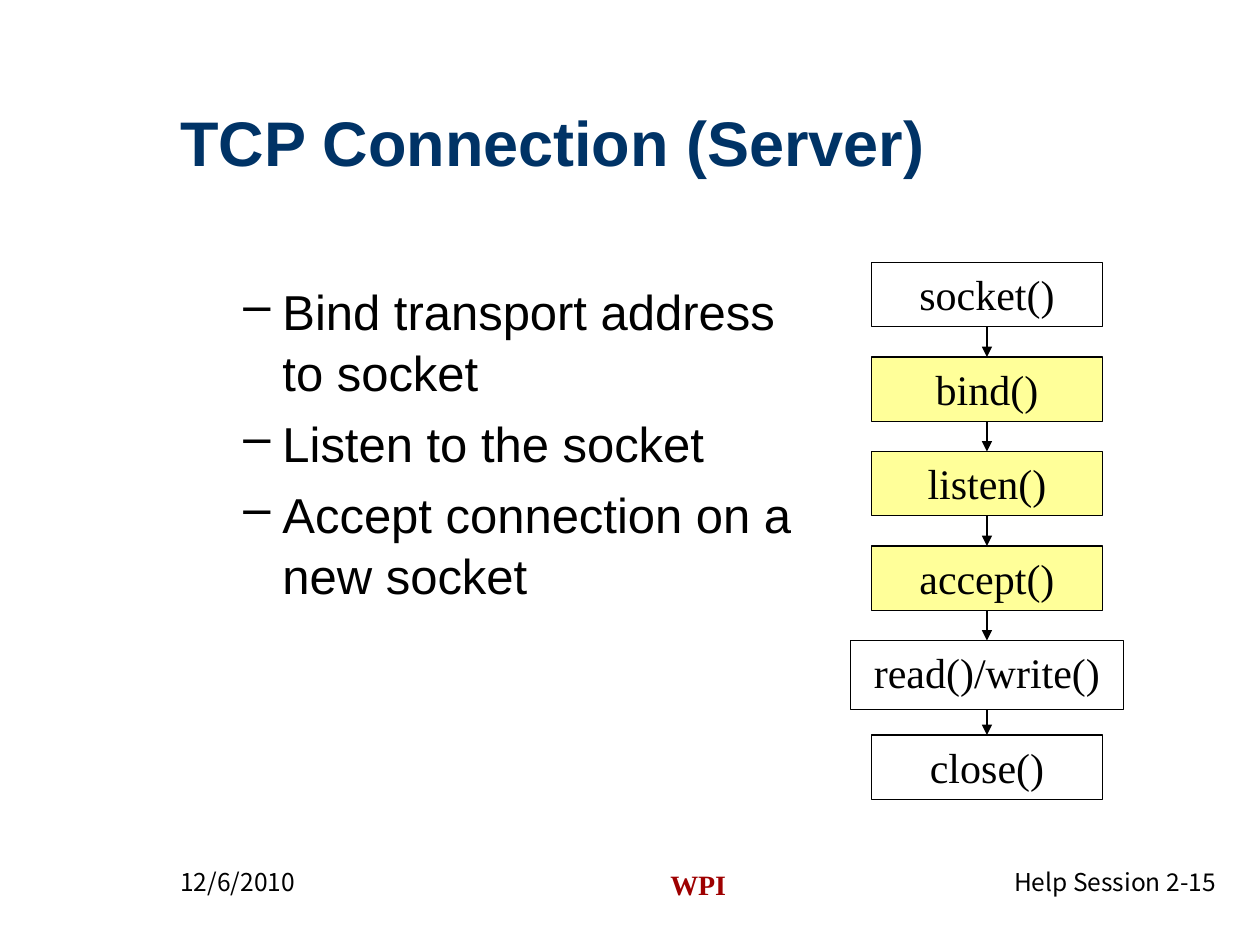
"""Builds the TCP server connection slide."""
import lxml.etree
import pptx
import pptx.dml.color
import pptx.enum.shapes
import pptx.enum.text
import pptx.oxml.ns
import pptx.util

ALIGN = pptx.enum.text.PP_ALIGN
ANCHOR = pptx.enum.text.MSO_ANCHOR
SHAPES = pptx.enum.shapes


def cells(count):
    """Turn grid cells, twelve to the inch, into a length."""
    return pptx.util.Inches(count / 12)


def color(hex_text):
    """Turn a hex string into a colour."""
    return pptx.dml.color.RGBColor.from_string(hex_text)


def add_element(parent, tag, **attributes):
    """Append a drawing element to its parent."""
    return lxml.etree.SubElement(parent, pptx.oxml.ns.qn(tag), **attributes)


def write(paragraph, text, *, font, size, ink="000000", bold=False,
          align=ALIGN.LEFT, before=0, line=1.0, bullet=None):
    """Write one formatted run into a paragraph."""
    if bullet:
        properties = paragraph._p.get_or_add_pPr()
        properties.set("marL", str(pptx.util.Inches(0.81)))
        properties.set("indent", str(pptx.util.Inches(-0.31)))
        add_element(properties, "a:buChar", char=bullet)
    paragraph.alignment = align
    paragraph.space_before = pptx.util.Pt(before)
    paragraph.line_spacing = line
    run = paragraph.add_run()
    run.text = text
    run.font.name = font
    run.font.size = pptx.util.Pt(size)
    run.font.bold = bold
    run.font.color.rgb = color(ink)


class Deck:
    """Holds the style and the current slide."""

    SANS, SERIF, FOOTER = "Arial", "Times New Roman", "Noto Sans CJK KR"
    NAVY, RED, YELLOW, BLACK = "003366", "9E0000", "FFFF99", "000000"
    LINE = 0.75

    def __init__(self, columns, rows):
        """Open a deck with one blank slide."""
        self.presentation = pptx.Presentation()
        self.presentation.slide_width = cells(columns)
        self.presentation.slide_height = cells(rows)
        self.slide = self.presentation.slides.add_slide(
            self.presentation.slide_layouts[6])

    def text(self, area, lines, anchor=ANCHOR.TOP, **style):
        """Add a text box with one paragraph per line."""
        frame = self.slide.shapes.add_textbox(*map(cells, area)).text_frame
        frame.word_wrap = True
        frame.vertical_anchor = anchor
        gap = style.pop("before", 0)
        for index, line in enumerate(lines):
            paragraph = frame.add_paragraph() if index else frame.paragraphs[0]
            write(paragraph, line, before=gap if index else 0, **style)

    def step(self, center, top, width, height, call, fill=None):
        """Add a box naming one socket call."""
        box = self.slide.shapes.add_shape(
            SHAPES.MSO_SHAPE.RECTANGLE,
            *map(cells, (center - width / 2, top, width, height)))
        box.shadow.inherit = False
        if fill:
            box.fill.solid()
            box.fill.fore_color.rgb = color(fill)
        else:
            box.fill.background()
        box.line.color.rgb = color(self.BLACK)
        box.line.width = pptx.util.Pt(self.LINE)
        box.text_frame.word_wrap = True
        box.text_frame.vertical_anchor = ANCHOR.TOP
        write(box.text_frame.paragraphs[0], call, font=self.SERIF, size=24,
              align=ALIGN.CENTER)

    def arrow(self, center, start, end):
        """Add a downward arrow."""
        arrow = self.slide.shapes.add_connector(
            SHAPES.MSO_CONNECTOR.STRAIGHT,
            *map(cells, (center, start, center, end)))
        arrow.line.color.rgb = color(self.BLACK)
        arrow.line.width = pptx.util.Pt(self.LINE)
        add_element(arrow.line._get_or_add_ln(), "a:tailEnd", type="triangle")
        add_element(arrow._element.spPr, "a:effectLst")


def main():
    """Build and save the slide."""
    deck = Deck(120, 90)
    deck.text((16, 6, 99, 15), ["TCP Connection (Server)"], ANCHOR.MIDDLE,
              font=deck.SANS, size=36, ink=deck.NAVY, bold=True)
    deck.text((16, 26, 62, 54),
              ["Bind transport address to socket", "Listen to the socket",
               "Accept connection on a new socket"],
              font=deck.SANS, size=28, before=5.6, line=1.04, bullet="–")

    center, first, pitch = 94, 25, 9
    plain, wide = (22, 6.12), (26, 6.6)
    calls = [("socket()", plain, None), ("bind()", plain, deck.YELLOW),
             ("listen()", plain, deck.YELLOW),
             ("accept()", plain, deck.YELLOW),
             ("read()/write()", wide, None), ("close()", plain, None)]
    for index, (call, (width, height), fill) in enumerate(calls):
        top = first + index * pitch
        deck.step(center, top, width, height, call, fill)
        if index < len(calls) - 1:
            deck.arrow(center, top + height, top + pitch)

    deck.text((16, 82, 25, 6), ["12/6/2010"], font=deck.FOOTER, size=14)
    deck.text((48, 82, 37, 6), ["WPI"], font=deck.SERIF, size=16,
              ink=deck.RED, bold=True, align=ALIGN.CENTER)
    deck.text((92, 82, 25, 6), ["Help Session 2-15"], font=deck.FOOTER,
              size=14, align=ALIGN.RIGHT)
    deck.presentation.save("out.pptx")


if __name__ == "__main__":
    main()
